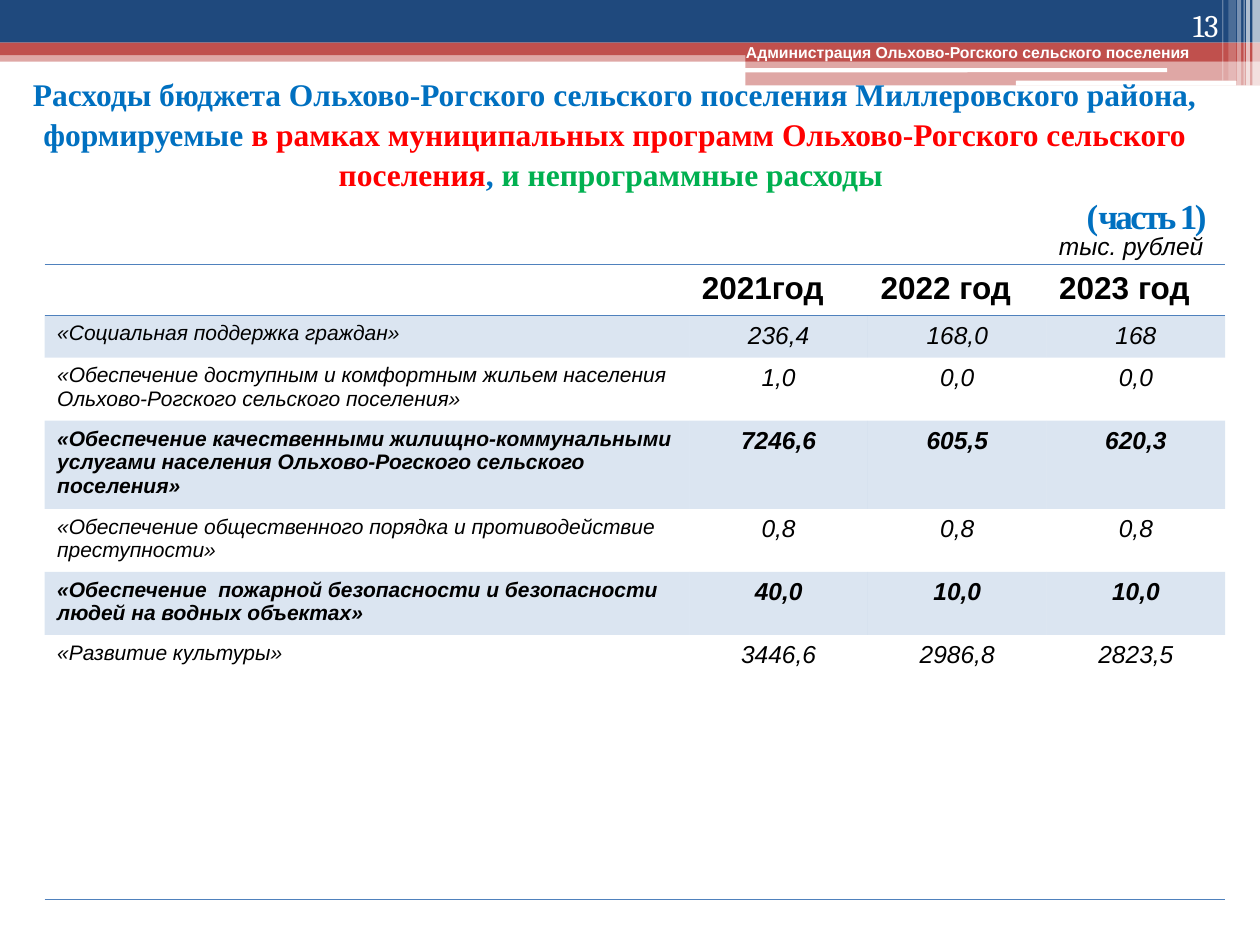
from lxml.etree import SubElement
from pptx import Presentation
from pptx.dml.color import RGBColor
from pptx.enum.shapes import MSO_SHAPE
from pptx.enum.text import MSO_ANCHOR, PP_ALIGN
from pptx.oxml.ns import qn
from pptx.util import Pt

COLORS = {"navy": "1F497D", "red": "C0504D", "white": "FFFFFF", "black": "000000",
          "accent": "4F81BD", "blue": "0070C0", "bright": "FF0000", "green": "00B050"}
PLAIN_TABLE = "{2D5ABB26-0587-4C30-8999-92F81FD0307C}"


class SlideBuilder:
    def __init__(self, page):
        self.page = page

    def paint(self, fill, color, opacity=100):
        """Fill with a solid colour; opacity is in percent."""
        fill.solid()
        fill.fore_color.rgb = RGBColor.from_string(COLORS[color])
        if opacity < 100:
            tint = fill._xPr.find(qn("a:solidFill"))[0]
            SubElement(tint, qn("a:alpha"), val=str(opacity * 1000))

    def band(self, left, top, width, height, color, opacity=100, rounded=False):
        kind = MSO_SHAPE.ROUNDED_RECTANGLE if rounded else MSO_SHAPE.RECTANGLE
        band = self.page.shapes.add_shape(kind, Pt(left), Pt(top), Pt(width), Pt(height))
        band.shadow.inherit = False
        band.line.fill.background()
        self.paint(band.fill, color, opacity)

    def span(self, para, text, color="black", spacing=None, **font):
        span = para.add_run()
        span.text = text
        for name, value in font.items():
            setattr(span.font, name, value)
        span.font.color.rgb = RGBColor.from_string(COLORS[color])
        if spacing is not None:
            span.font._element.set("spc", str(round(spacing * 100)))

    def text_box(self, left, top, width, height, anchor=MSO_ANCHOR.TOP, align=PP_ALIGN.LEFT):
        """Add an empty text box and return its paragraph."""
        box = self.page.shapes.add_textbox(Pt(left), Pt(top), Pt(width), Pt(height))
        frame = box.text_frame
        frame.word_wrap = True
        frame.vertical_anchor = anchor
        para = frame.paragraphs[0]
        para.alignment = align
        return para

    def label(self, text, *place, anchor=MSO_ANCHOR.TOP, align=PP_ALIGN.LEFT, **style):
        self.span(self.text_box(*place, anchor=anchor, align=align), text, **style)

    def rule(self, cell, side):
        """Draw a border on one side of a cell: T or B."""
        line = SubElement(cell._tc.get_or_add_tcPr(), qn(f"a:ln{side}"), w=str(Pt(1)))
        fill = SubElement(line, qn("a:solidFill"))
        SubElement(fill, qn("a:srgbClr"), val=COLORS["accent"])

    def table(self, left, top, widths, heights, header, rows, bold_rows):
        table = self.page.shapes.add_table(
            len(heights), len(widths), Pt(left), Pt(top), Pt(sum(widths)), Pt(sum(heights))).table
        table._tbl.tblPr.find(qn("a:tableStyleId")).text = PLAIN_TABLE
        for column, width in zip(table.columns, widths):
            column.width = Pt(width)
        for row, height in zip(table.rows, heights):
            row.height = Pt(height)
        last = len(rows)
        for r, values in enumerate([header] + rows):
            for c, text in enumerate(values):
                cell = table.cell(r, c)
                for side in {0: "TB", last: "B"}.get(r, ""):
                    self.rule(cell, side)
                if r % 2:
                    self.paint(cell.fill, "accent", 20)
                else:
                    cell.fill.background()
                para = cell.text_frame.paragraphs[0]
                if r and c:
                    para.alignment = PP_ALIGN.CENTER
                size = 18 if r == 0 else 14 if c else 12
                if text:
                    self.span(para, text, name="Arial", size=Pt(size),
                              bold=r == 0 or r in bold_rows, italic=r > 0)


def add_header(builder):
    for band in [(0, 28.8, 720, 6.5, "red", 50),
                 (0, 0, 720, 24.4, "navy"),
                 (0, 24.4, 720, 7.2, "red"),
                 (426, 28.1, 294, 7, "red"),
                 (426, 34.6, 294, 14.2, "red", 50)]:
        builder.band(*band)
    builder.band(425.5, 38.9, 241.5, 2.4, "white", rounded=True)
    builder.band(580.5, 46.1, 126, 2.9, "white", rounded=True)
    for left, width, height, opacity in [(715.7, 4.3, 49, 65), (712.1, 2.2, 49, 65),
                                         (710.6, 0.7, 49, 60), (707, 2.2, 49, 40),
                                         (702, 4.3, 46.1, 20), (698.4, 0.7, 46.1, 30)]:
        builder.band(left, 0, width, height, "white", opacity)
    builder.label("Администрация Ольхово-Рогского сельского поселения",
                  419.2, 20.9, 272, 18, name="Arial", size=Pt(9), bold=True, color="white")


def add_title(builder):
    para = builder.text_box(0, 43.2, 702.7, 90.7, MSO_ANCHOR.MIDDLE, PP_ALIGN.CENTER)
    para.line_spacing = 1.05
    tabs = SubElement(para._p.get_or_add_pPr(), qn("a:tabLst"))
    SubElement(tabs, qn("a:tab"), pos=str(Pt(607.7)), algn="l")
    font = {"name": "Times New Roman", "bold": True}
    for text, color in [
            ("Расходы бюджета Ольхово-Рогского сельского поселения Миллеровского района, "
             "формируемые ", "blue"),
            ("в рамках муниципальных программ Ольхово-Рогского сельского поселения", "bright"),
            (", ", "blue"),
            ("и непрограммные расходы ", "green")]:
        builder.span(para, text, color, size=Pt(18), **font)
    para.add_line_break()
    for text, color, spacing in [("\t", "green", None), ("(", "blue", None),
                                 ("часть 1)", "blue", -1.5)]:
        builder.span(para, text, color, spacing, size=Pt(20), **font)


def main():
    deck = Presentation()
    deck.slide_width, deck.slide_height = Pt(720), Pt(540)
    builder = SlideBuilder(deck.slides.add_slide(deck.slide_layouts[6]))
    add_header(builder)
    add_title(builder)
    builder.label("13", 643.7, 0, 59.8, 28.8, anchor=MSO_ANCHOR.BOTTOM, align=PP_ALIGN.RIGHT,
                  name="Cambria", size=Pt(18), color="white")
    builder.table(
        25.5, 151, [368.4] + [102.1] * 3, [29.3, 22.8, 34.2, 47.4, 34.2, 34.2, 151.2],
        ["", "2021год", "2022 год", "2023 год"],
        [["«Социальная поддержка граждан»", "236,4", "168,0", "168"],
         ["«Обеспечение доступным и комфортным жильем населения "
          "Ольхово-Рогского сельского поселения»", "1,0", "0,0", "0,0"],
         ["«Обеспечение качественными жилищно-коммунальными услугами населения "
          "Ольхово-Рогского сельского поселения»", "7246,6", "605,5", "620,3"],
         ["«Обеспечение общественного порядка и противодействие преступности»",
          "0,8", "0,8", "0,8"],
         ["«Обеспечение  пожарной безопасности и безопасности людей на водных объектах»",
          "40,0", "10,0", "10,0"],
         ["«Развитие культуры»", "3446,6", "2986,8", "2823,5"]],
        bold_rows={3, 5})
    builder.label("тыс. рублей", 598, 128.2, 102.2, 24.5,
                  name="Arial", size=Pt(14), italic=True)
    deck.save("out.pptx")


if __name__ == "__main__":
    main()
